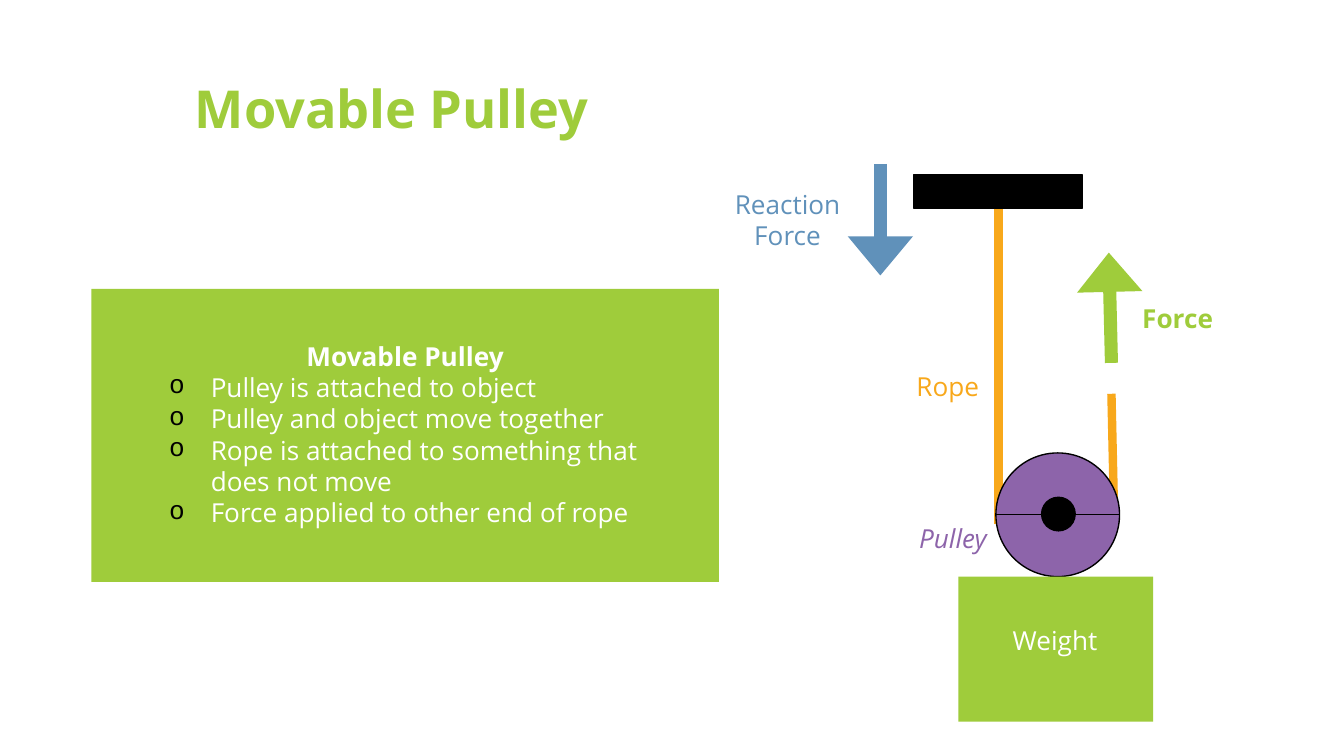
from lxml import etree
from pptx import Presentation
from pptx.dml.color import RGBColor
from pptx.enum.shapes import MSO_CONNECTOR, MSO_SHAPE
from pptx.enum.text import PP_ALIGN
from pptx.oxml.ns import qn
from pptx.util import Inches, Pt

RECT, OVAL = MSO_SHAPE.RECTANGLE, MSO_SHAPE.OVAL
STRAIGHT = MSO_CONNECTOR.STRAIGHT
LEFT, CENTER = PP_ALIGN.LEFT, PP_ALIGN.CENTER
FONT = "Open Sans"
C = {"green": "9FCC3B", "orange": "F8A81B", "purple": "8D64AA",
     "blue": "6091BA", "black": "000000", "white": "FFFFFF"}

prs = Presentation()
prs.slide_width = Inches(10)
prs.slide_height = prs.slide_width * 9 // 16
s = prs.slides.add_slide(prs.slide_layouts[6])


def add_text(box, lines, color, align=LEFT, **fmt):
    tb = s.shapes.add_textbox(*map(Inches, box))
    tf = tb.text_frame
    tf.word_wrap = True
    for i, line in enumerate(lines):
        p = tf.paragraphs[0] if i == 0 else tf.add_paragraph()
        p.alignment = align
        r = p.add_run()
        r.text = line
        r.font.color.rgb = RGBColor.from_string(C[color])
        for name, value in {"name": FONT, "size": Pt(14), **fmt}.items():
            setattr(r.font, name, value)
    return tf


def add_line(start, end, color, width, arrow=False):
    ln = s.shapes.add_connector(STRAIGHT, *map(Inches, start + end))
    ln.line.color.rgb = RGBColor.from_string(C[color])
    ln.line.width = Pt(width)
    etree.SubElement(ln._element.spPr, qn("a:effectLst"))
    if arrow:
        etree.SubElement(ln.line._get_or_add_ln(), qn("a:tailEnd"),
                         type="triangle", w="lg", len="med")


# Title
tf = add_text((0.34, 0.49, 9.32, 0.63), ["Movable Pulley"], "green",
              size=Pt(28), bold=True)
tf.margin_left, tf.margin_top = Inches(1.11), Inches(0.08)

# Ropes go behind the pulley
add_line((8.27, 2.93), (8.29, 3.85), "orange", 4.5)
add_line((7.43, 3.9), (7.43, 1.55), "orange", 4.5)

# Panel, pulley, axle, weight and ceiling
for kind, box, fill, outlined in [
    (RECT, (0.68, 2.15, 4.67, 2.18), "green", False),
    (OVAL, (7.41, 3.37, 0.92, 0.92), "purple", True),
    (OVAL, (7.75, 3.7, 0.25, 0.25), "black", True),
    (RECT, (7.13, 4.29, 1.45, 1.08), "green", False),
    (RECT, (6.8, 1.3, 1.25, 0.25), "black", True),
]:
    sp = s.shapes.add_shape(kind, *map(Inches, box))
    sp.shadow.inherit = False
    sp.fill.solid()
    sp.fill.fore_color.rgb = RGBColor.from_string(C[fill])
    if outlined:
        sp.line.color.rgb = RGBColor.from_string(C["black"])
        sp.line.width = Pt(0.75)
    else:
        sp.line.fill.background()

# Pulley diameter and force arrows
add_line((7.41, 3.83), (8.33, 3.83), "black", 0.75)
add_line((8.27, 2.7), (8.25, 1.88), "green", 7, arrow=True)
add_line((6.55, 1.22), (6.55, 2.05), "blue", 7, arrow=True)

# Labels
add_text((6.72, 2.71, 0.72, 0.34), ["Rope"], "orange")
add_text((8.4, 2.2, 0.92, 0.34), ["Force"], "green", bold=True)
add_text((7.19, 4.6, 1.32, 0.34), ["Weight"], "white", CENTER)
add_text((6.74, 3.84, 1.67, 0.34), ["Pulley"], "purple", italic=True)
add_text((5.3, 1.35, 1.12, 0.57), ["Reaction Force"], "blue", CENTER)

# Panel text: a centred heading over bullets
tf = add_text((1.16, 2.48, 3.71, 1.51), [
    "Movable Pulley",
    "Pulley is attached to object",
    "Pulley and object move together",
    "Rope is attached to something that does not move",
    "Force applied to other end of rope",
], "white")
heading, *bullets = tf.paragraphs
heading.alignment = CENTER
heading.runs[0].font.bold = True
for p in bullets:
    pPr = p._p.get_or_add_pPr()
    pPr.set("marL", str(Inches(0.31)))
    pPr.set("indent", str(Inches(-0.31)))
    color = etree.SubElement(pPr, qn("a:buClr"))
    etree.SubElement(color, qn("a:srgbClr"), val=C["black"])
    etree.SubElement(pPr, qn("a:buFont"), typeface="Courier New")
    etree.SubElement(pPr, qn("a:buChar"), char="o")

prs.save("out.pptx")
